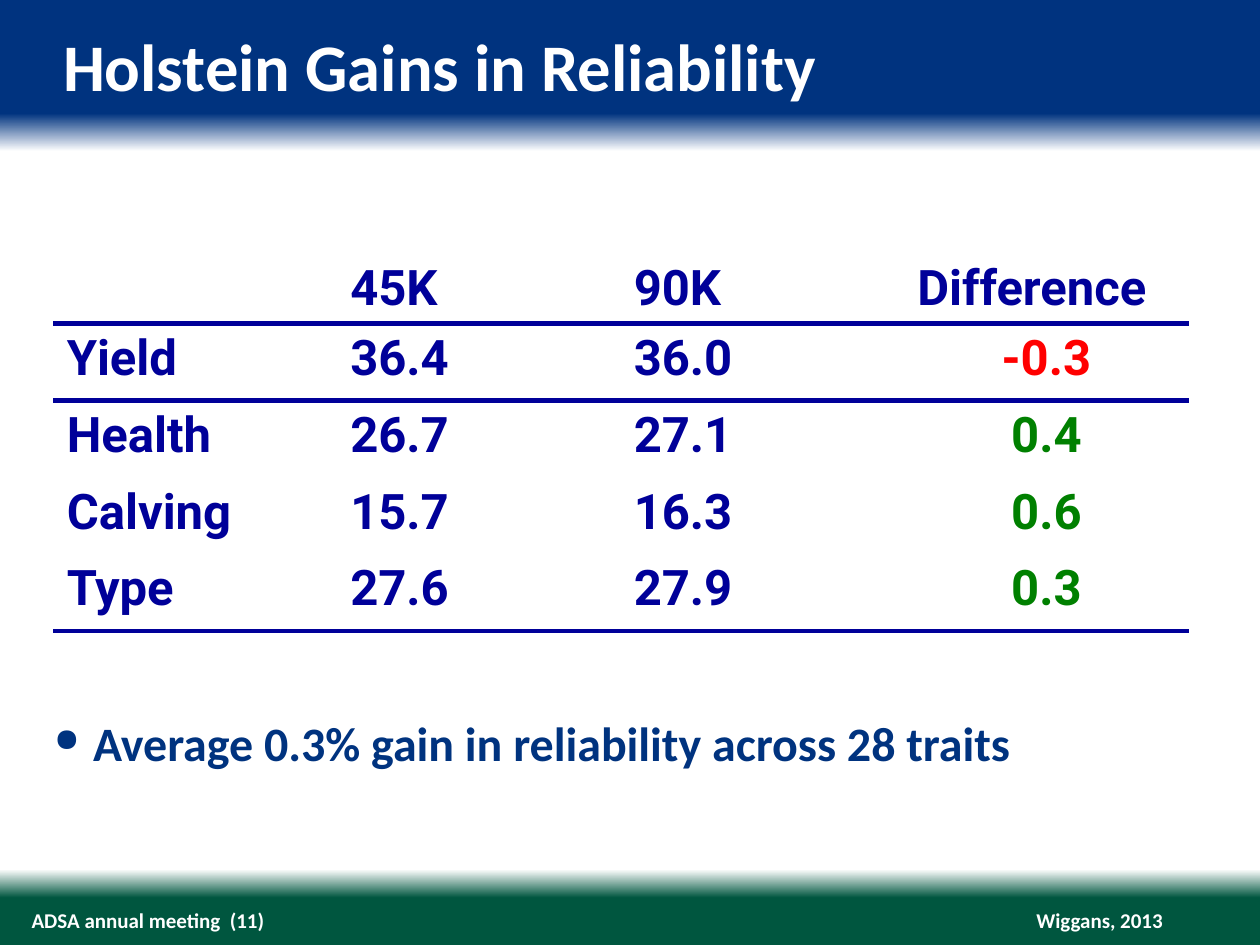
from lxml import etree
from pptx import Presentation
from pptx.dml.color import RGBColor
from pptx.enum.text import MSO_ANCHOR, PP_ALIGN
from pptx.oxml import parse_xml
from pptx.oxml.ns import nsdecls, qn
from pptx.util import Inches, Pt

TOP, MIDDLE, BOTTOM = MSO_ANCHOR.TOP, MSO_ANCHOR.MIDDLE, MSO_ANCHOR.BOTTOM
LEFT, CENTER, RIGHT = PP_ALIGN.LEFT, PP_ALIGN.CENTER, PP_ALIGN.RIGHT

COLORS = {
    "blue": "00337F",
    "green": "00563F",
    "white": "FFFFFF",
    "navy": "000099",
    "loss": "FF0000",
    "gain": "008000",
}


def write(frame, text, size, color, font="Calibri", align=LEFT, anchor=TOP, margin=0):
    """Fill a text frame with one bold paragraph; margin None keeps the default insets."""
    frame.word_wrap = True
    frame.vertical_anchor = anchor
    if margin is not None:
        frame.margin_left = frame.margin_right = Inches(margin)
        frame.margin_top = frame.margin_bottom = Inches(margin)
    para = frame.paragraphs[0]
    para.alignment = align
    span = para.add_run()
    span.text = text
    span.font.name = font
    span.font.size = Pt(size)
    span.font.bold = True
    span.font.color.rgb = RGBColor.from_string(COLORS[color])
    return para


def add_bottom_border(cell, color, width):
    line = parse_xml(
        f'<a:lnB {nsdecls("a")} w="{Pt(width)}"><a:solidFill>'
        f'<a:srgbClr val="{COLORS[color]}"/></a:solidFill></a:lnB>'
    )
    cell._tc.get_or_add_tcPr().insert(0, line)


deck = Presentation()
deck.slide_width, deck.slide_height = Inches(10), Inches(7.5)
page = deck.slides.add_slide(deck.slide_layouts[5])

# Background: blue band fading to white, then to a green band
fill = page.background.fill
fill.gradient()
fill.gradient_angle = 270
stops = fill._fill._gradFill.find(qn("a:gsLst"))
for stop in list(stops):
    stops.remove(stop)
for percent, color in [(0, "blue"), (12, "blue"), (16, "white"),
                       (92, "white"), (95, "green"), (100, "green")]:
    stop = etree.SubElement(stops, qn("a:gs"), pos=str(percent * 1000))
    etree.SubElement(stop, qn("a:srgbClr"), val=COLORS[color])

# Title
title = page.shapes.title
title.left, title.top = Inches(0.5), Inches(0.2)
title.width, title.height = Inches(9), Inches(0.64)
write(title.text_frame, "Holstein Gains in Reliability", 38, "white")

# Footer
for text, left, width, align in [("ADSA annual meeting  (11)", 0.25, 5.22, LEFT),
                                 ("Wiggans, 2013", 8.03, 1.2, RIGHT)]:
    box = page.shapes.add_textbox(Inches(left), Inches(7.2), Inches(width), Inches(0.2))
    write(box.text_frame, text, 12, "white", align=align, anchor=MIDDLE)

# Conclusion
box = page.shapes.add_textbox(Inches(0.43), Inches(4.44), Inches(9), Inches(1.68))
para = write(box.text_frame, "Average 0.3% gain in reliability across 28 traits",
             27.4, "blue", anchor=BOTTOM)
properties = para._p.get_or_add_pPr()
properties.set("marL", str(Inches(0.31)))
properties.set("indent", str(-Inches(0.31)))
bullet_color = etree.SubElement(properties, qn("a:buClr"))
etree.SubElement(bullet_color, qn("a:srgbClr"), val=COLORS["blue"])
etree.SubElement(properties, qn("a:buSzPct"), val="67000")
etree.SubElement(properties, qn("a:buChar"), char="●")
para.line_spacing = Pt(32)

# Reliability table
rows = [
    ["", "45K", "90K", "Difference"],
    ["Yield", "36.4", "36.0", "-0.3"],
    ["Health", "26.7", "27.1", "0.4"],
    ["Calving", "15.7", "16.3", "0.6"],
    ["Type", "27.6", "27.9", "0.3"],
]
ruled_rows = (0, 1, 4)
table = page.shapes.add_table(len(rows), 4, Inches(0.43), Inches(1.46),
                              Inches(9.02), Inches(3.55)).table
table.first_row = table.horz_banding = False
for column in table.columns:
    column.width = Inches(2.25)
for r, values in enumerate(rows):
    table.rows[r].height = Inches(0.61 if r else 1.11)
    for c, value in enumerate(values):
        cell = table.cell(r, c)
        cell.fill.background()
        if r in ruled_rows:
            add_bottom_border(cell, "navy", 3)
        cell.vertical_anchor = TOP if r else BOTTOM
        is_difference = r > 0 and c == 3
        color = "navy"
        if is_difference:
            color = "loss" if value.startswith("-") else "gain"
        if value:
            write(cell.text_frame, value, 28, color, font="Roboto", margin=None,
                  align=CENTER if is_difference else LEFT)

deck.save("out.pptx")
